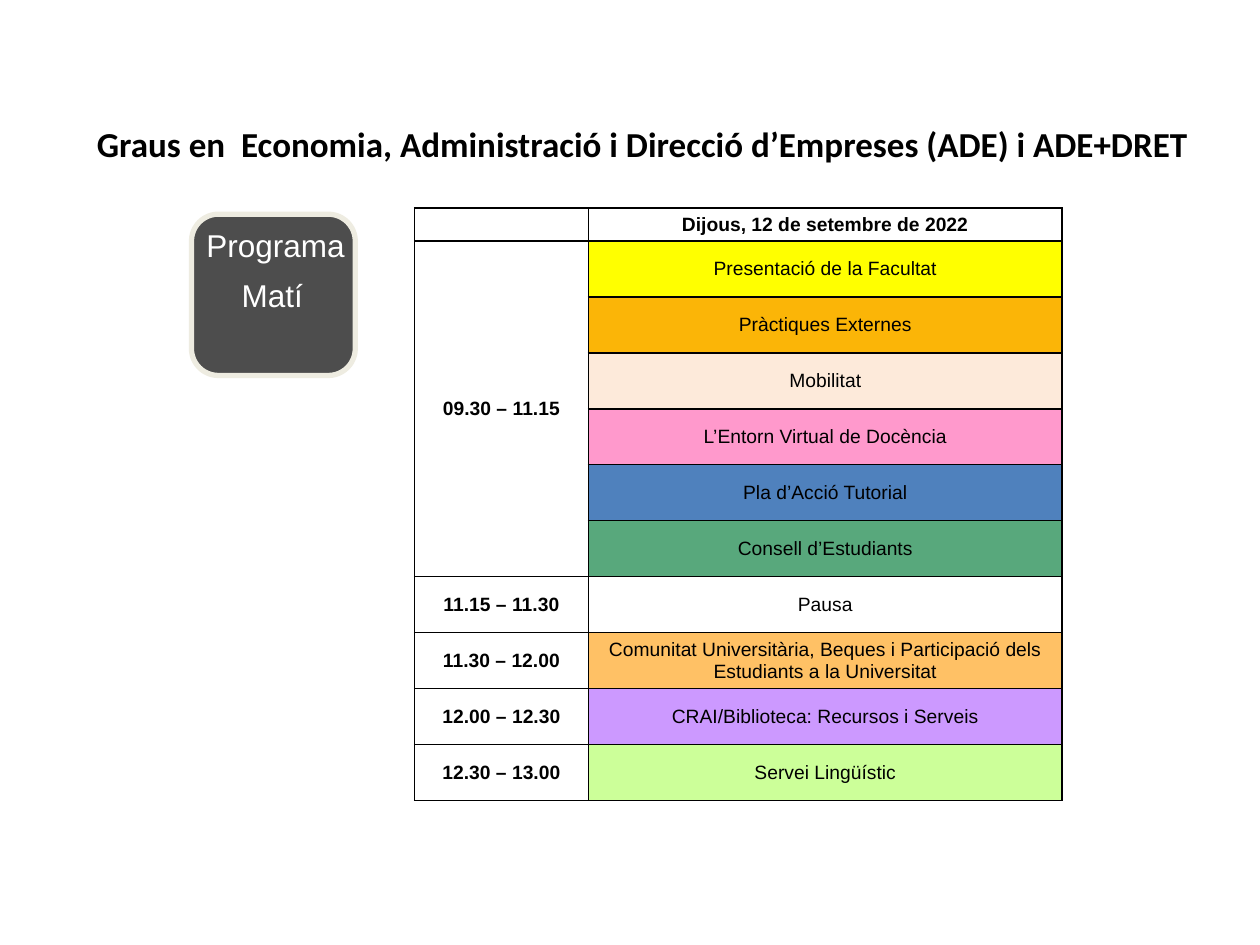
from typing import NamedTuple

from lxml.etree import SubElement
from pptx import Presentation
from pptx.dml.color import RGBColor
from pptx.enum.shapes import MSO_SHAPE
from pptx.enum.text import MSO_ANCHOR, PP_ALIGN
from pptx.oxml.ns import qn
from pptx.util import Inches, Pt

COLORS = {
    "black": "000000",
    "white": "FFFFFF",
    "badge": "4D4D4D",
    "badge_edge": "EEECE1",
    "yellow": "FFFF00",
    "amber": "FBB507",
    "peach": "FDEADA",
    "pink": "FF99CC",
    "blue": "4F81BD",
    "green": "58A87C",
    "orange": "FFC165",
    "violet": "CC99FF",
    "lime": "CCFF99",
}


class Session(NamedTuple):
    time: str
    topic: str
    color: str
    span: int = 1


HEADING = "Dijous, 12 de setembre de 2022"
SESSIONS = [
    Session("09.30 – 11.15", "Presentació de la Facultat", "yellow", 6),
    Session("", "Pràctiques Externes", "amber"),
    Session("", "Mobilitat", "peach"),
    Session("", "L’Entorn Virtual de Docència", "pink"),
    Session("", "Pla d’Acció Tutorial", "blue"),
    Session("", "Consell d’Estudiants", "green"),
    Session("11.15 – 11.30", "Pausa", "white"),
    Session(
        "11.30 – 12.00",
        "Comunitat Universitària, Beques i Participació dels Estudiants a la Universitat",
        "orange",
    ),
    Session("12.00 – 12.30", "CRAI/Biblioteca: Recursos i Serveis", "violet"),
    Session("12.30 – 13.00", "Servei Lingüístic", "lime"),
]


def rgb(name: str) -> RGBColor:
    return RGBColor.from_string(COLORS[name])


def write(p, text: str, *, size: float, font: str = "Arial", color: str = "black",
          bold: bool = False, align=PP_ALIGN.LEFT) -> None:
    p.alignment = align
    r = p.add_run()
    r.text = text
    r.font.size = Pt(size)
    r.font.name = font
    r.font.bold = bold
    r.font.color.rgb = rgb(color)


def add_text_box(s, left: float, top: float, width: float, height: float, wrap: bool):
    box = s.shapes.add_textbox(Inches(left), Inches(top), Inches(width), Inches(height))
    box.text_frame.word_wrap = wrap
    return box.text_frame


def add_badge(s) -> None:
    sp = s.shapes.add_shape(MSO_SHAPE.ROUNDED_RECTANGLE, Inches(1.52), Inches(1.7),
                            Inches(1.3), Inches(1.28))
    sp.shadow.inherit = False
    sp.fill.solid()
    sp.fill.fore_color.rgb = rgb("badge")
    sp.line.color.rgb = rgb("badge_edge")
    sp.line.width = Pt(3)

    tf = add_text_box(s, 1.54, 1.78, 1.31, 1.22, wrap=False)
    first, second = tf.paragraphs[0], tf.add_paragraph()
    second.space_before = Pt(9)
    second._p.get_or_add_pPr().set("marL", str(Inches(0.28)))
    for p, text in ((first, "Programa"), (second, "Matí")):
        p.line_spacing = 0.9
        write(p, text, size=18, color="white")


def set_borders(cell) -> None:
    """Give all four sides a 1 pt black line; call before the cell is filled."""
    tc_pr = cell._tc.get_or_add_tcPr()
    for side in ("lnL", "lnR", "lnT", "lnB"):
        ln = SubElement(tc_pr, qn(f"a:{side}"), w=str(Pt(1)))
        fill = SubElement(ln, qn("a:solidFill"))
        SubElement(fill, qn("a:srgbClr"), val=COLORS["black"])


def fill_cell(cell, text: str, color: str = "white", bold: bool = False) -> None:
    set_borders(cell)
    cell.fill.solid()
    cell.fill.fore_color.rgb = rgb(color)
    cell.vertical_anchor = MSO_ANCHOR.MIDDLE
    cell.margin_left = cell.margin_right = Inches(0.07)
    cell.margin_top = cell.margin_bottom = Inches(0.04)
    p = cell.text_frame.paragraphs[0]
    if text:
        write(p, text, size=11, bold=bold, align=PP_ALIGN.CENTER)
    else:
        p._p.get_or_add_endParaRPr().set("sz", "1100")


def add_schedule(s) -> None:
    height, header_height = Inches(4.7), Inches(0.26)
    frame = s.shapes.add_table(len(SESSIONS) + 1, 2, Inches(3.29), Inches(1.65),
                               Inches(5.14), height)
    table = frame.table
    table.first_row = table.horz_banding = False
    table.columns[0].width = Inches(1.38)
    table.columns[1].width = Inches(3.76)
    for row in table.rows:
        row.height = (height - header_height) // len(SESSIONS)
    table.rows[0].height = header_height

    fill_cell(table.cell(0, 0), "")
    fill_cell(table.cell(0, 1), HEADING, bold=True)
    for i, session in enumerate(SESSIONS, start=1):
        fill_cell(table.cell(i, 0), session.time, bold=True)
        fill_cell(table.cell(i, 1), session.topic, session.color)
        if session.span > 1:
            table.cell(i, 0).merge(table.cell(i + session.span - 1, 0))


def main() -> None:
    prs = Presentation()
    prs.slide_width, prs.slide_height = Inches(10), Inches(7.5)
    s = prs.slides.add_slide(prs.slide_layouts[6])
    add_badge(s)
    add_schedule(s)
    title = add_text_box(s, 0.67, 0.92, 8.98, 0.44, wrap=True)
    write(title.paragraphs[0],
          "Graus en  Economia, Administració i Direcció d’Empreses (ADE) i ADE+DRET",
          size=20, font="Calibri", bold=True)
    prs.save("out.pptx")


if __name__ == "__main__":
    main()
